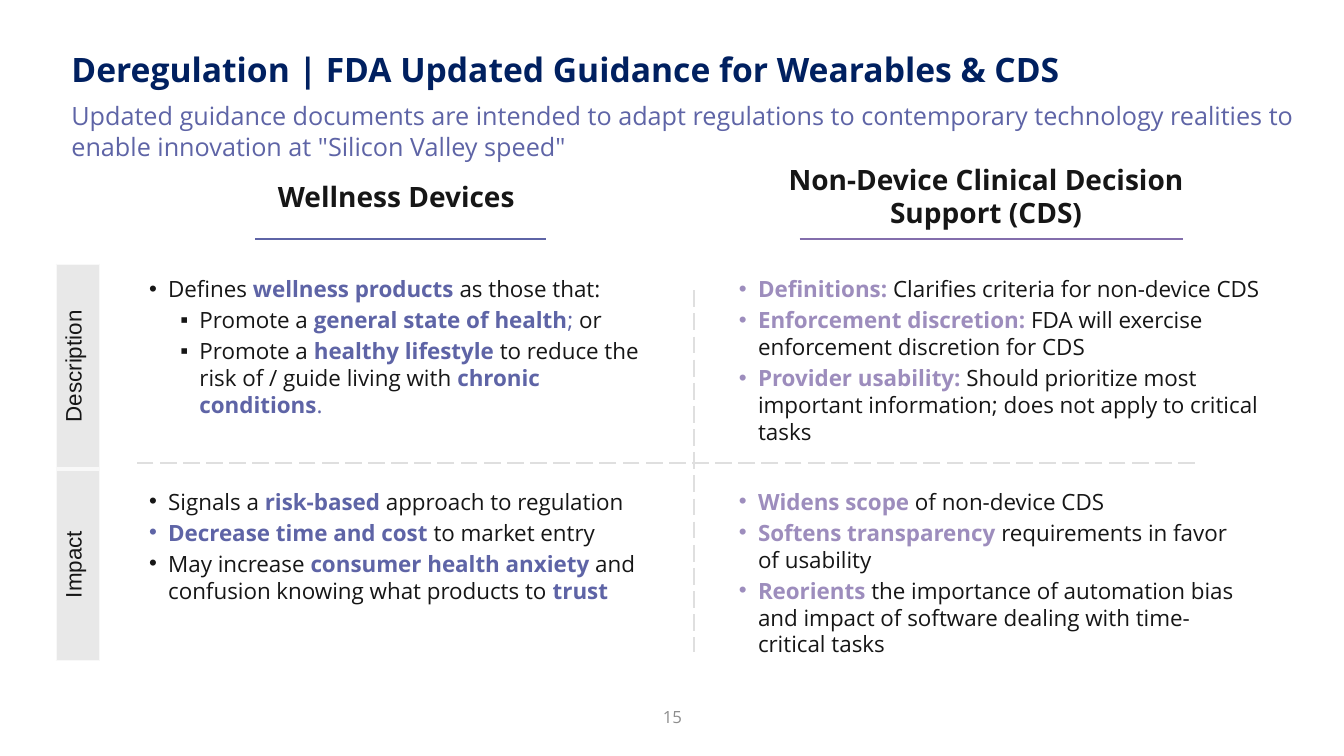
"""Build the slide on updated guidance for wearables and clinical decision support."""
from lxml.etree import SubElement
from pptx import Presentation
from pptx.dml.color import RGBColor as RGB
from pptx.enum.dml import MSO_LINE_DASH_STYLE as DASH
from pptx.enum.shapes import MSO_CONNECTOR as CONN
from pptx.enum.text import MSO_ANCHOR, MSO_AUTO_SIZE, PP_ALIGN as AL
from pptx.oxml.ns import qn
from pptx.util import Inches, Pt

THEME = {
    "font": "Open Sans", "label_font": "Arial",
    "navy": "002060", "ink": "161616", "wellness": "5E64A6", "cds": "9D8DBD",
    "cds_rule": "836EAC", "divider": "DFDFDF", "label": "E8E8E8",
    "border": "F8F8F8", "page": "8D8D8D",
    "title_pt": 24, "heading_pt": 20, "subtitle_pt": 18, "body_pt": 16, "page_pt": 12,
}

TITLE = "Deregulation | FDA Updated Guidance for Wearables & CDS"
SUBTITLE = ("Updated guidance documents are intended to adapt regulations to contemporary "
            "technology realities to enable innovation at \"Silicon Valley speed\"")
PAGE = "15"
ROW_LABELS = [("Description", 2.03, 3), ("Impact", 1.9, 1)]

PLAIN, KEY, TINT = "plain", "key", "tint"
COLUMNS = [
    {
        "heading": "Wellness Devices", "accent": "wellness", "rule": "wellness",
        "heading_box": (1.53, 1.73, 4.9, 0.44), "rule_x": (2.53, 5.42),
        "left": 1.38, "sizes": [(5.2, 1.53), (5.2, 1.26)],
        "cells": [
            [
                (0, [("Defines ", PLAIN), ("wellness products ", KEY),
                     ("as those that:", PLAIN)]),
                (1, [("Promote a ", PLAIN), ("general state of health", KEY),
                     ("; ", TINT), ("or", PLAIN)]),
                (1, [("Promote a ", PLAIN), ("healthy lifestyle ", KEY),
                     ("to reduce the risk of / guide living with ", PLAIN),
                     ("chronic conditions", KEY), (".", TINT)]),
            ],
            [
                (0, [("Signals a ", PLAIN), ("risk-based", KEY),
                     (" approach to regulation", PLAIN)]),
                (0, [("Decrease time and cost", KEY), (" to market entry", PLAIN)]),
                (0, [("May increase ", PLAIN), ("consumer health anxiety ", KEY),
                     ("and confusion knowing what products to ", PLAIN), ("trust", KEY)]),
            ],
        ],
    },
    {
        "heading": "Non-Device Clinical Decision Support (CDS)",
        "accent": "cds", "rule": "cds_rule",
        "heading_box": (7.38, 1.56, 4.9, 0.77), "rule_x": (7.93, 11.73),
        "left": 7.23, "sizes": [(5.39, 1.8), (5.2, 1.8)],
        "cells": [
            [
                (0, [("Definitions:", KEY),
                     (" Clarifies criteria for non-device CDS", PLAIN)]),
                (0, [("Enforcement discretion:", KEY),
                     (" FDA will exercise enforcement discretion for CDS", PLAIN)]),
                (0, [("Provider usability: ", KEY),
                     ("Should prioritize most important information; "
                      "does not apply to critical tasks", PLAIN)]),
            ],
            [
                (0, [("Widens scope", KEY), (" of non-device CDS", PLAIN)]),
                (0, [("Softens transparency ", KEY),
                     ("requirements in favor of usability", PLAIN)]),
                (0, [("Reorients", KEY),
                     (" the importance of automation bias and impact of software "
                      "dealing with time-critical tasks", PLAIN)]),
            ],
        ],
    },
]
CELL_TOPS = [2.68, 4.79]
RULE_Y = 2.37
DIVIDERS = [((6.88, 2.88), (6.88, 6.47)), ((11.85, 4.59), (1.35, 4.59))]
BULLETS = [("•", 0.19), ("▪", 0.5)]
HANG = 0.19


def add_run(p, text, size, color, bold=False, font="font"):
    r = p.add_run()
    r.text = text
    formats = {"name": THEME[font], "size": Pt(THEME[size]), "bold": bold}
    for name, value in formats.items():
        setattr(r.font, name, value)
    r.font.color.rgb = RGB.from_string(THEME[color])


def add_box(s, box, grow=True, **formats):
    tf = s.shapes.add_textbox(*map(Inches, box)).text_frame
    formats = {"word_wrap": True, **formats}
    if grow:
        formats["auto_size"] = MSO_AUTO_SIZE.SHAPE_TO_FIT_TEXT
    for name, value in formats.items():
        setattr(tf, name, value)
    return tf


def add_line(s, start, end, color, dash=None):
    line = s.shapes.add_connector(CONN.STRAIGHT, *map(Inches, start + end))
    line.line.color.rgb = RGB.from_string(THEME[color])
    line.line.width = Pt(1.5)
    if dash:
        line.line.dash_style = dash
    SubElement(line._element.spPr, qn("a:effectLst"))


def add_bullets(s, box, items, accent):
    tf = add_box(s, box)
    styles = {PLAIN: ("ink", False), KEY: (accent, True), TINT: (accent, False)}
    for i, (level, runs) in enumerate(items):
        p = tf.paragraphs[0] if i == 0 else tf.add_paragraph()
        char, indent = BULLETS[level]
        pPr = p._p.get_or_add_pPr()
        pPr.set("marL", str(Inches(indent)))
        pPr.set("indent", str(-Inches(HANG)))
        p.level = level
        p.space_after = Pt(3)
        SubElement(pPr, qn("a:buFont"), typeface=THEME["label_font"])
        SubElement(pPr, qn("a:buChar"), char=char)
        for text, style in runs:
            add_run(p, text, "body_pt", *styles[style])


def add_row_labels(s):
    height = sum(h for _, h, _ in ROW_LABELS)
    frame = s.shapes.add_table(len(ROW_LABELS), 1, *map(Inches, (0.56, 2.62, 0.43, height)))
    table = frame.table
    table.first_row = table.horz_banding = False
    for i, (label, row_height, bottom) in enumerate(ROW_LABELS):
        table.rows[i].height = Inches(row_height)
        cell = table.cell(i, 0)
        tcPr = cell._tc.get_or_add_tcPr()
        tcPr.set("vert", "vert270")
        top = ROW_LABELS[i - 1][2] if i else 1
        for side, width in zip("LRTB", (1, 1, top, bottom)):
            ln = SubElement(tcPr, qn(f"a:ln{side}"), w=str(Pt(width)))
            fill = SubElement(ln, qn("a:solidFill"))
            SubElement(fill, qn("a:srgbClr"), val=THEME["border"])
        cell.fill.solid()
        cell.fill.fore_color.rgb = RGB.from_string(THEME["label"])
        cell.vertical_anchor = MSO_ANCHOR.MIDDLE
        p = cell.text_frame.paragraphs[0]
        p.alignment = AL.CENTER
        add_run(p, label, "body_pt", "ink", font="label_font")


def main():
    prs = Presentation()
    prs.slide_width, prs.slide_height = Inches(13.33), Inches(7.5)
    s = prs.slides.add_slide(prs.slide_layouts[6])

    p = add_box(s, (0.61, 0.44, 12.59, 0.5)).paragraphs[0]
    add_run(p, TITLE, "title_pt", "navy", True)
    p = add_box(s, (0.61, 0.95, 12.4, 0.71)).paragraphs[0]
    p.space_after = Pt(6)
    add_run(p, SUBTITLE, "subtitle_pt", "wellness")
    add_row_labels(s)

    for col in COLUMNS:
        p = add_box(s, col["heading_box"], margin_left=0).paragraphs[0]
        p.alignment = AL.CENTER
        add_run(p, col["heading"], "heading_pt", "ink", True)
        x1, x2 = col["rule_x"]
        add_line(s, (x1, RULE_Y), (x2, RULE_Y), col["rule"])
        for top, size, items in zip(CELL_TOPS, col["sizes"], col["cells"]):
            add_bullets(s, (col["left"], top, *size), items, col["accent"])

    for start, end in DIVIDERS:
        add_line(s, start, end, "divider", DASH.LONG_DASH)

    p = add_box(s, (5.17, 6.96, 3, 0.4), grow=False).paragraphs[0]
    p.alignment = AL.CENTER
    add_run(p, PAGE, "page_pt", "page")
    prs.save("out.pptx")


if __name__ == "__main__":
    main()
